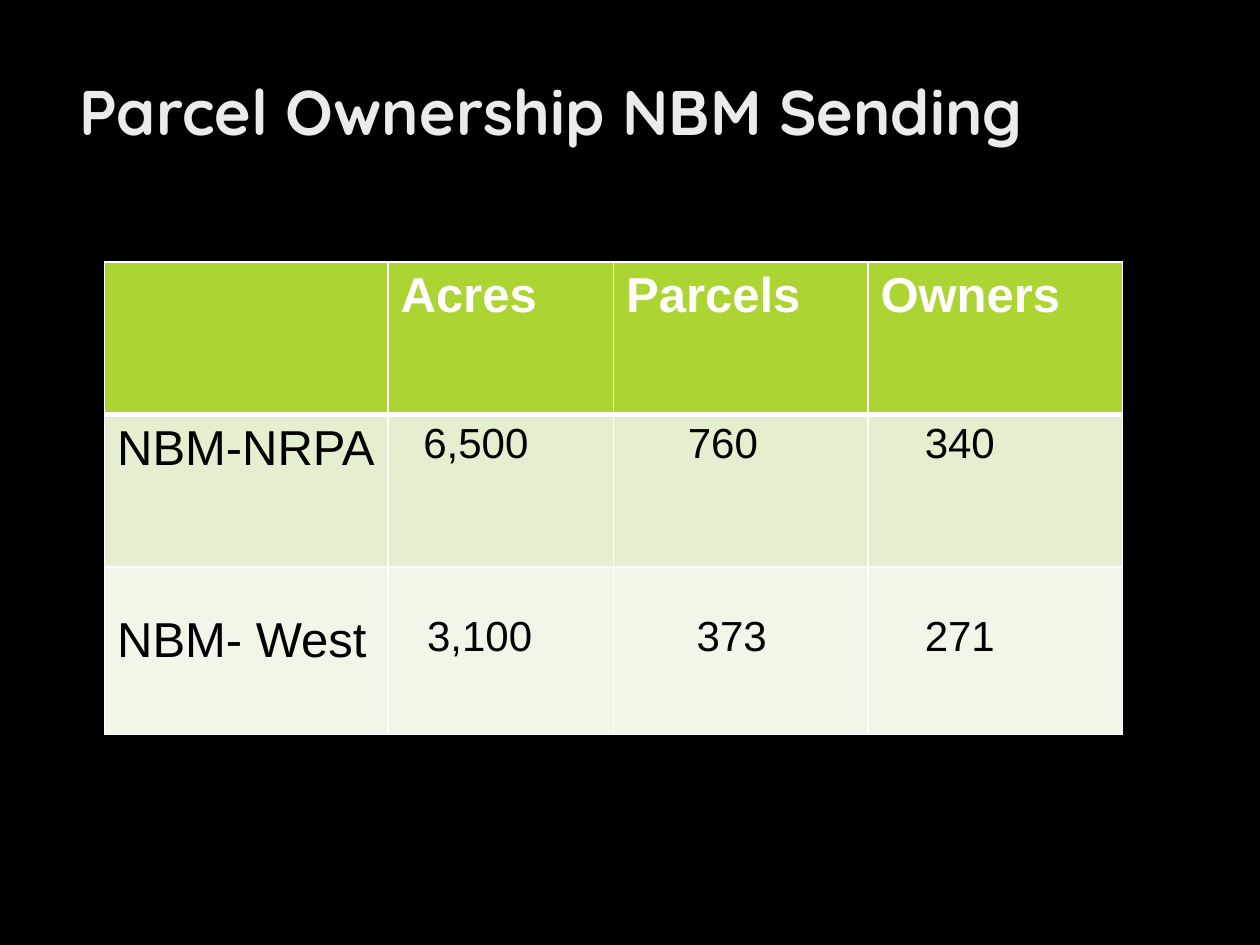
from lxml import etree
from pptx import Presentation
from pptx import util as u
from pptx.dml.color import RGBColor
from pptx.enum import text
from pptx.oxml import ns

BLACK = RGBColor(0x00, 0x00, 0x00)
WHITE = RGBColor(0xFF, 0xFF, 0xFF)
TITLE_GREY = RGBColor(0xEB, 0xEB, 0xEB)
ROW_FILLS = [RGBColor(0xAC, 0xD4, 0x33), RGBColor(0xE3, 0xEF, 0xCE), RGBColor(0xF1, 0xF7, 0xE8)]

ROWS = [
    ["", "Acres", "Parcels", "Owners"],
    ["NBM-NRPA", "6,500", "760", "340"],
    ["NBM- West", "3,100", "373", "271"],
]
COLUMN_WIDTHS = [2.25, 1.79, 2.02, 2.02]
ROW_HEIGHTS = [1.21, 1.21, 1.33]
LEFT_MARGINS = [[0.1] * 4, [0.1, 0.28, 0.59, 0.45], [0.1, 0.31, 0.66, 0.45]]
TOP_MARGINS = [0.05, 0.05, 0.37]


def write_text(frame, content, size=28, color=BLACK, bold=False, font="Arial", left=0.1, top=0.05):
    """Write one formatted line of text with the given left and top margins."""
    para = frame.paragraphs[0]
    para.alignment = text.PP_ALIGN.LEFT
    span = para.add_run()
    span.text = content
    span.font.size = u.Pt(size)
    span.font.name = font
    span.font.bold = bold
    span.font.color.rgb = color
    return u.Inches(left), u.Inches(top)


def add_title(page, content):
    """Add the slide title."""
    box = page.shapes.add_textbox(u.Inches(0), u.Inches(0.53), u.Inches(9.33), u.Inches(0.97))
    frame = box.text_frame
    frame.word_wrap = True
    frame.vertical_anchor = text.MSO_ANCHOR.TOP
    frame.margin_left, frame.margin_top = write_text(
        frame, content, size=36, color=TITLE_GREY, bold=True, font="Quicksand", left=0.63)


def set_borders(cell, top, bottom):
    """Draw white borders, with the top and bottom widths in points."""
    properties = cell._tc.get_or_add_tcPr()
    for side, width in (("L", 1), ("R", 1), ("T", top), ("B", bottom)):
        line = etree.SubElement(properties, ns.qn(f"a:ln{side}"), w=str(u.Pt(width)))
        fill = etree.SubElement(line, ns.qn("a:solidFill"))
        etree.SubElement(fill, ns.qn("a:srgbClr"), val=str(WHITE))


def fill_cell(cell, row, column):
    """Format one table cell and write its text."""
    header = row == 0
    set_borders(cell, top=3 if row == 1 else 1, bottom=3 if header else 1)
    cell.fill.solid()
    cell.fill.fore_color.rgb = ROW_FILLS[row]
    content = ROWS[row][column]
    if content:
        cell.margin_left, cell.margin_top = write_text(
            cell.text_frame, content, size=28 if header or column == 0 else 24,
            color=WHITE if header else BLACK, bold=header,
            left=LEFT_MARGINS[row][column], top=TOP_MARGINS[row])


def add_ownership_table(page):
    """Add the table of acres, parcels and owners."""
    frame = page.shapes.add_table(
        len(ROWS), len(COLUMN_WIDTHS), u.Inches(0.83), u.Inches(2.08),
        u.Inches(sum(COLUMN_WIDTHS)), u.Inches(sum(ROW_HEIGHTS)))
    table = frame.table
    for column, width in zip(table.columns, COLUMN_WIDTHS):
        column.width = u.Inches(width)
    for row, height in enumerate(ROW_HEIGHTS):
        table.rows[row].height = u.Inches(height)
        for column in range(len(COLUMN_WIDTHS)):
            fill_cell(table.cell(row, column), row, column)


def main():
    """Build and save the slide."""
    deck = Presentation()
    deck.slide_width, deck.slide_height = u.Inches(10), u.Inches(7.5)
    page = deck.slides.add_slide(deck.slide_layouts[6])
    page.background.fill.solid()
    page.background.fill.fore_color.rgb = BLACK
    add_title(page, "Parcel Ownership NBM Sending")
    add_ownership_table(page)
    deck.save("out.pptx")


if __name__ == "__main__":
    main()
